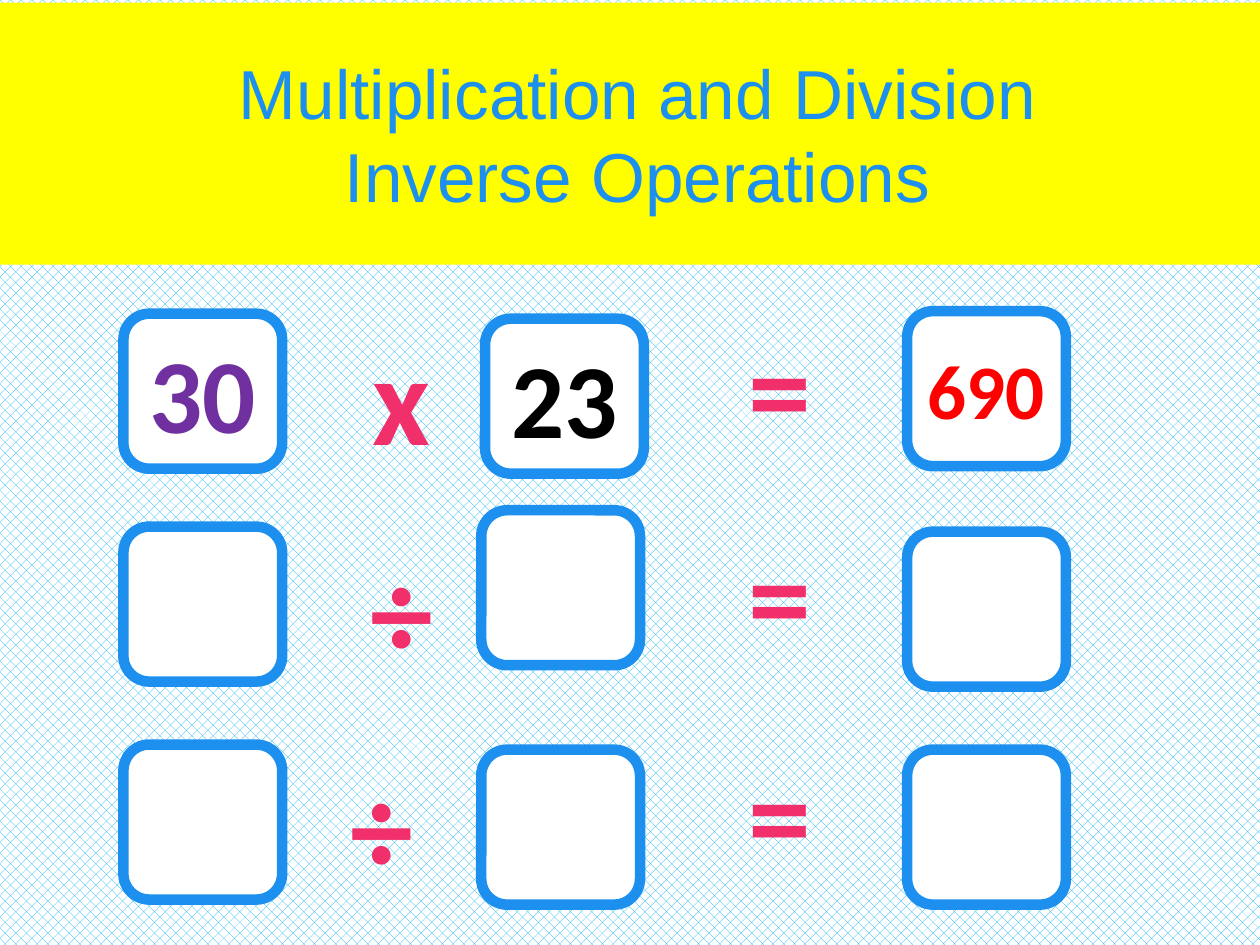
from pptx import Presentation
from pptx.dml.color import RGBColor
from pptx.enum.dml import MSO_PATTERN
from pptx.enum.shapes import MSO_SHAPE
from pptx.enum.text import MSO_ANCHOR, MSO_AUTO_SIZE, PP_ALIGN
from pptx.util import Inches, Pt

RECTANGLE = MSO_SHAPE.RECTANGLE
ROUNDED = MSO_SHAPE.ROUNDED_RECTANGLE
MIDDLE = MSO_ANCHOR.MIDDLE
TOP = MSO_ANCHOR.TOP
CENTER = PP_ALIGN.CENTER
GROW = MSO_AUTO_SIZE.SHAPE_TO_FIT_TEXT
PATTERN = MSO_PATTERN.from_xml("pct40")

COLUMNS, ROWS = 100, 75
CELL = Inches(0.1)
CARD_SIZE = (12.6, 12.3)
SIGN_SIZE = (12.6, 13.1)

COLORS = {
    "blue": "1D90EF",
    "sky": "00B0F0",
    "white": "FFFFFF",
    "yellow": "FFFF00",
    "pink": "F12F6B",
    "purple": "7030A0",
    "black": "000000",
    "red": "FF0000",
}

EQUATIONS = [
    {
        "box": (9.8, 24.9),
        "cards": [
            (0, 0, "30", "purple", 60),
            (28.7, 0.4, "23", "black", 60),
            (62.2, -0.2, "690", "red", 44),
        ],
        "signs": [(15.8, 0, "x"), (45.8, -0.8, "=")],
    },
    {
        "box": (9.8, 41.8),
        "cards": [(0, 0), (28.4, -1.3), (62.2, 0.4)],
        "signs": [(15.8, 0, "÷"), (45.8, -1.3, "=")],
    },
    {
        "box": (9.8, 59.1),
        "cards": [(0, 0), (28.4, 0.4), (62.2, 0.4)],
        "signs": [(14.2, -0.2, "÷"), (45.8, -1.2, "=")],
    },
]


def color(name):
    """Return the named colour."""
    return RGBColor.from_string(COLORS[name])


def cells(*lengths):
    """Convert grid lengths to slide units."""
    return [round(length * CELL) for length in lengths]


def write_text(shape, text, *, size, fill, font="Calibri", bold=True, anchor=MIDDLE):
    """Write centred text, one paragraph for each line."""
    frame = shape.text_frame
    frame.word_wrap = True
    frame.vertical_anchor = anchor
    frame.text = text
    for paragraph in frame.paragraphs:
        paragraph.alignment = CENTER
        paragraph.font.name = font
        paragraph.font.size = Pt(size)
        paragraph.font.bold = bold
        paragraph.font.color.rgb = color(fill)


def add_panel(slide, kind, box, fill, line=None):
    """Add a flat filled shape with an optional thick outline."""
    shape = slide.shapes.add_shape(kind, *cells(*box))
    shape.shadow.inherit = False
    shape.fill.solid()
    shape.fill.fore_color.rgb = color(fill)
    if line:
        shape.line.color.rgb = color(line)
        shape.line.width = Pt(6)
    else:
        shape.line.fill.background()
    return shape


def add_banner(slide, box):
    """Add the title banner."""
    banner = add_panel(slide, RECTANGLE, box, "yellow")
    write_text(banner, "Multiplication and Division\nInverse Operations",
               size=39.6, fill="blue", font="Arial", bold=False)


def add_card(slide, box, text="", fill="black", size=60):
    """Add a number card, empty unless text is given."""
    card = add_panel(slide, ROUNDED, box, "white", line="blue")
    if text:
        write_text(card, text, size=size, fill=fill)


def add_sign(slide, box, text):
    """Add an operator sign."""
    sign = slide.shapes.add_textbox(*cells(*box))
    write_text(sign, text, size=72, fill="pink", anchor=TOP)
    sign.text_frame.auto_size = GROW


def add_equation(slide, box, cards, signs):
    """Add one equation with its parts placed from the box corner."""
    left, top = box
    for across, down, *content in cards:
        add_card(slide, (left + across, top + down, *CARD_SIZE), *content)
    for across, down, text in signs:
        add_sign(slide, (left + across, top + down, *SIGN_SIZE), text)


def paint_background(slide):
    """Fill the background with a light blue pattern."""
    fill = slide.background.fill
    fill.patterned()
    fill.pattern = PATTERN
    fill.fore_color.rgb = color("sky")
    fill.back_color.rgb = color("white")


def main():
    """Build and save the slide."""
    presentation = Presentation()
    presentation.slide_width, presentation.slide_height = cells(COLUMNS, ROWS)
    slide = presentation.slides.add_slide(presentation.slide_layouts[6])
    paint_background(slide)
    add_banner(slide, (0, 0.2, 101.2, 20.8))
    for equation in EQUATIONS:
        add_equation(slide, **equation)
    presentation.save("out.pptx")


if __name__ == "__main__":
    main()
